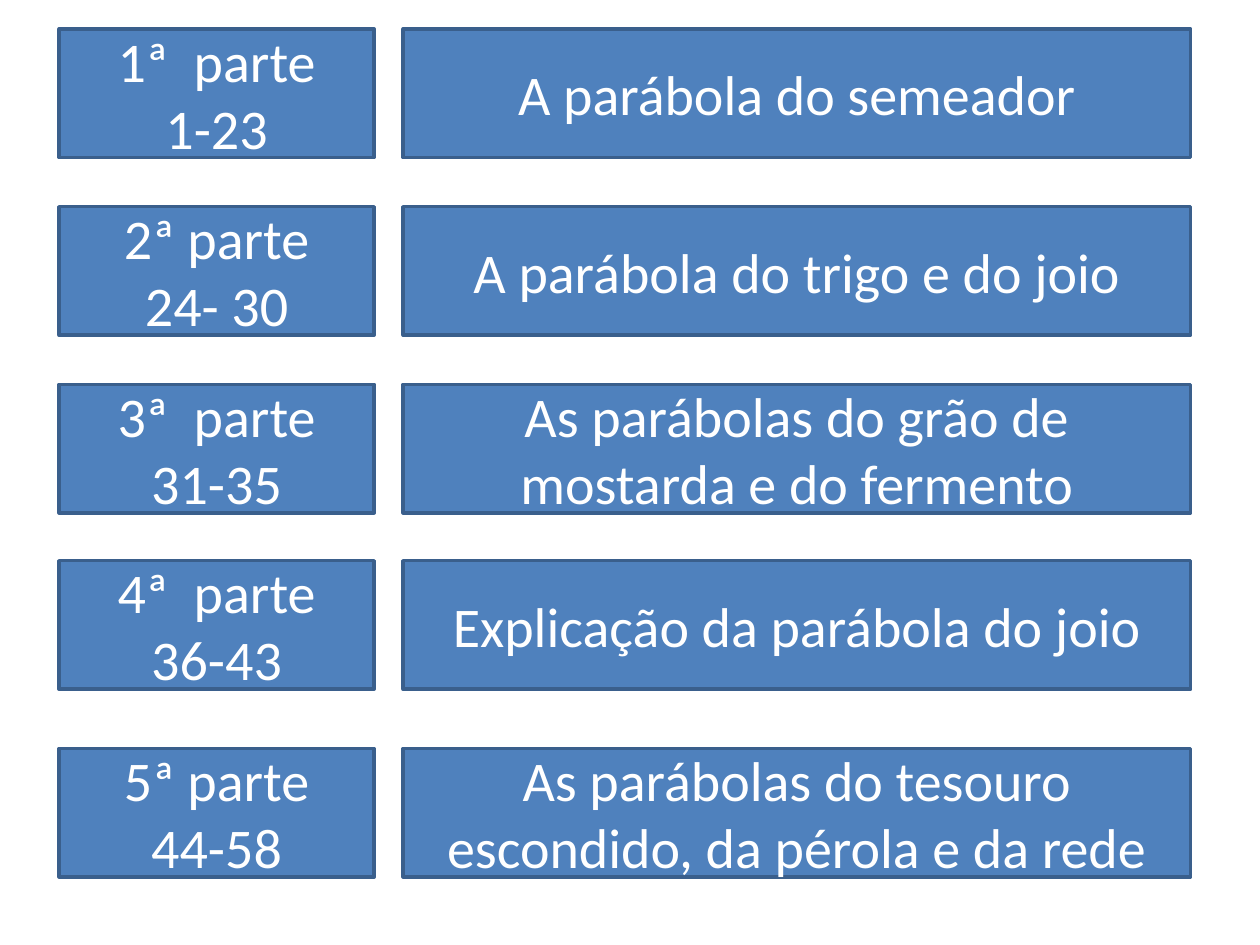
"""Build a slide listing the five parts of a chapter of parables."""
from pptx import Presentation
from pptx.dml.color import RGBColor
from pptx.enum.shapes import MSO_SHAPE
from pptx.enum.text import MSO_ANCHOR, PP_ALIGN
from pptx.util import Inches, Pt

RECTANGLE = MSO_SHAPE.RECTANGLE
MIDDLE = MSO_ANCHOR.MIDDLE
CENTER = PP_ALIGN.CENTER

BLUE = RGBColor(0x4F, 0x81, 0xBD)
DARK_BLUE = RGBColor(0x3A, 0x5F, 0x8C)
WHITE = RGBColor(0xFF, 0xFF, 0xFF)

PART_LEFT, PART_WIDTH = 0.47, 2.5
TITLE_LEFT, TITLE_WIDTH = 3.2, 6.25
BOX_HEIGHT = 1.02

ROWS = [
    (0.23, ["1ª  parte", "1-23"], "A parábola do semeador"),
    (1.64, ["2ª parte", "24- 30"], "A parábola do trigo e do joio"),
    (3.05, ["3ª  parte", "31-35"], "As parábolas do grão de mostarda e do fermento"),
    (4.45, ["4ª  parte", "36-43"], "Explicação da parábola do joio"),
    (5.94, ["5ª parte", "44-58"], "As parábolas do tesouro escondido, da pérola e da rede"),
]


def add_box(slide, left, top, width, lines):
    """Add a blue box with one centred paragraph per line."""
    s = slide.shapes.add_shape(
        RECTANGLE, Inches(left), Inches(top), Inches(width), Inches(BOX_HEIGHT))
    s.shadow.inherit = False
    s.fill.solid()
    s.fill.fore_color.rgb = BLUE
    s.line.color.rgb = DARK_BLUE
    s.line.width = Pt(2)
    tf = s.text_frame
    tf.word_wrap = True
    tf.vertical_anchor = MIDDLE
    tf.text = "\n".join(lines)
    for p in tf.paragraphs:
        p.alignment = CENTER
        p.font.name = "Calibri"
        p.font.size = Pt(32)
        p.font.color.rgb = WHITE


def main():
    """Create the presentation and save it."""
    prs = Presentation()
    prs.slide_width, prs.slide_height = Inches(10), Inches(7.5)
    slide = prs.slides.add_slide(prs.slide_layouts[6])
    for top, part, title in ROWS:
        add_box(slide, PART_LEFT, top, PART_WIDTH, part)
        add_box(slide, TITLE_LEFT, top, TITLE_WIDTH, [title])
    prs.save("out.pptx")


if __name__ == "__main__":
    main()
